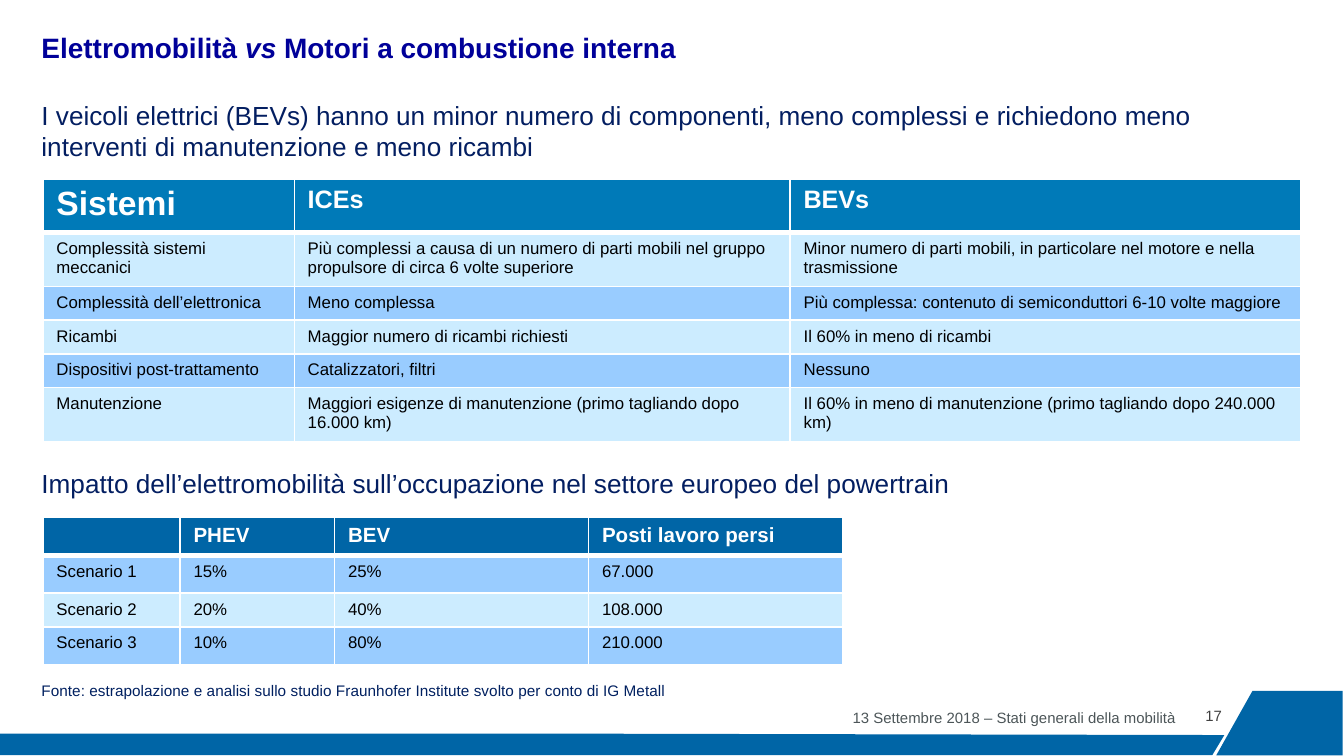
from lxml import etree
from pptx import Presentation
from pptx import util as u
from pptx.dml.color import RGBColor
from pptx.enum import text
from pptx.oxml import ns

WHITE = RGBColor(0xFF, 0xFF, 0xFF)
BLACK = RGBColor(0, 0, 0)
BAND_BLUE = RGBColor(0x00, 0x65, 0xA6)
HEADER_BLUE = RGBColor(0x00, 0x7A, 0xB8)
LIGHT_ROW = RGBColor(0xCC, 0xEC, 0xFF)
MID_ROW = RGBColor(0x99, 0xCC, 0xFF)
TITLE_BLUE = RGBColor(0x00, 0x00, 0x99)
HEADING_NAVY = RGBColor(0x03, 0x1E, 0x61)
SOURCE_NAVY = RGBColor(0x00, 0x20, 0x60)
NUMBER_GRAY = RGBColor(0x40, 0x40, 0x40)
FOOTER_GRAY = RGBColor(0x4C, 0x55, 0x58)

SYSTEMS = [
    ("Sistemi", "ICEs", "BEVs"),
    ("Complessità sistemi meccanici",
     "Più complessi a causa di un numero di parti mobili nel gruppo propulsore di circa 6 volte superiore",
     "Minor numero di parti mobili, in particolare nel motore e nella trasmissione"),
    ("Complessità dell’elettronica", "Meno complessa",
     "Più complessa: contenuto di semiconduttori 6-10 volte maggiore"),
    ("Ricambi", "Maggior numero di ricambi richiesti", "Il 60% in meno di ricambi"),
    ("Dispositivi post-trattamento", "Catalizzatori, filtri", "Nessuno"),
    ("Manutenzione",
     "Maggiori esigenze di manutenzione (primo tagliando dopo 16.000 km)",
     "Il 60% in meno di manutenzione (primo tagliando dopo 240.000 km)"),
]
SCENARIOS = [
    ("", "PHEV", "BEV", "Posti lavoro persi"),
    ("Scenario 1", "15%", "25%", "67.000"),
    ("Scenario 2", "20%", "40%", "108.000"),
    ("Scenario 3", "10%", "80%", "210.000"),
]


def style_font(paragraph, size, color, bold=False):
    font = paragraph.font
    font.name = "Arial"
    font.size = u.Pt(size)
    font.bold = bold
    font.color.rgb = color


def add_text(slide, box, parts, size, color, bold=False, align=text.PP_ALIGN.LEFT):
    frame = slide.shapes.add_textbox(*map(u.Inches, box)).text_frame
    frame.word_wrap = True
    paragraph = frame.paragraphs[0]
    paragraph.alignment = align
    for wording, italic in parts:
        run = paragraph.add_run()
        run.text = wording
        if italic:
            run.font.italic = True
    style_font(paragraph, size, color, bold)
    return paragraph


def add_band(slide, points):
    corners = [(u.Inches(x), u.Inches(y)) for x, y in points]
    builder = slide.shapes.build_freeform(*corners[0])
    builder.add_line_segments(corners[1:], close=True)
    band = builder.convert_to_shape()
    band.shadow.inherit = False
    band.fill.solid()
    band.fill.fore_color.rgb = BAND_BLUE
    band.line.fill.background()


def set_borders(cell, top, bottom):
    properties = cell._tc.get_or_add_tcPr()
    for side, width in (("L", 1), ("R", 1), ("T", top), ("B", bottom)):
        line = etree.SubElement(properties, ns.qn(f"a:ln{side}"), w=str(u.Pt(width)))
        fill = etree.SubElement(line, ns.qn("a:solidFill"))
        etree.SubElement(fill, ns.qn("a:srgbClr"), val=str(WHITE))


def add_grid(slide, left, top, widths, heights, rows, header_fill, header_sizes, row_fills):
    table = slide.shapes.add_table(
        len(rows), len(widths), u.Inches(left), u.Inches(top),
        u.Inches(sum(widths)), u.Inches(sum(heights))).table
    for column, width in zip(table.columns, widths):
        column.width = u.Inches(width)
    for r, (values, height) in enumerate(zip(rows, heights)):
        table.rows[r].height = u.Inches(height)
        header = r == 0
        for c, value in enumerate(values):
            cell = table.cell(r, c)
            set_borders(cell, 3 if r == 1 else 1, 3 if header else 1)
            cell.fill.solid()
            cell.fill.fore_color.rgb = header_fill if header else row_fills[(r - 1) % 2]
            size = header_sizes[c] if header else 9
            paragraph = cell.text_frame.paragraphs[0]
            if value:
                paragraph.text = value
            style_font(paragraph, size, WHITE if header else BLACK, header)
            if not value:
                etree.SubElement(paragraph._p, ns.qn("a:endParaRPr"), sz=str(size * 100))


def main():
    deck = Presentation()
    deck.slide_width = u.Inches(10)
    deck.slide_height = deck.slide_width * 9 // 16
    slide = deck.slides.add_slide(deck.slide_layouts[6])
    right = text.PP_ALIGN.RIGHT

    add_band(slide, [(0, 5.46), (4.55, 5.46), (9.11, 5.47), (9.02, 5.62), (0, 5.62)])
    add_band(slide, [(9.32, 5.14), (9.99, 5.14), (9.99, 5.62), (9.05, 5.62)])
    add_text(slide, (8.62, 5.21, 0.57, 0.29), [("17", False)], 8, NUMBER_GRAY, align=right)
    footer = add_text(slide, (4.93, 5.16, 3.92, 0.28),
                      [("13 Settembre 2018 – Stati generali della mobilità", False)],
                      8, FOOTER_GRAY, align=right)
    footer.line_spacing = 1.5

    add_text(slide, (0.21, 0.18, 9.29, 0.35),
             [("Elettromobilità ", False), ("vs", True), (" Motori a combustione interna", False)],
             15, TITLE_BLUE, bold=True)
    add_text(slide, (0.21, 0.69, 9.58, 0.57),
             [("I veicoli elettrici (BEVs) hanno un minor numero di componenti, meno complessi "
               "e richiedono meno interventi di manutenzione e meno ricambi", False)],
             14, HEADING_NAVY)
    add_grid(slide, 0.32, 1.33, [1.87, 3.69, 3.8], [0.39, 0.4, 0.25, 0.25, 0.25, 0.39],
             SYSTEMS, HEADER_BLUE, [18, 13.5, 13.5], [LIGHT_ROW, MID_ROW])

    add_text(slide, (0.21, 3.43, 8.82, 0.34),
             [("Impatto dell’elettromobilità sull’occupazione nel settore europeo del powertrain", False)],
             14, HEADING_NAVY)
    add_grid(slide, 0.32, 3.85, [1.02, 1.15, 1.89, 1.89], [0.27, 0.28, 0.25, 0.28],
             SCENARIOS, BAND_BLUE, [11] * 4, [MID_ROW, LIGHT_ROW])
    add_text(slide, (0.21, 5.02, 8.82, 0.24),
             [("Fonte: estrapolazione e analisi sullo studio Fraunhofer Institute "
               "svolto per conto di IG Metall", False)],
             8.25, SOURCE_NAVY)

    deck.save("out.pptx")


if __name__ == "__main__":
    main()
